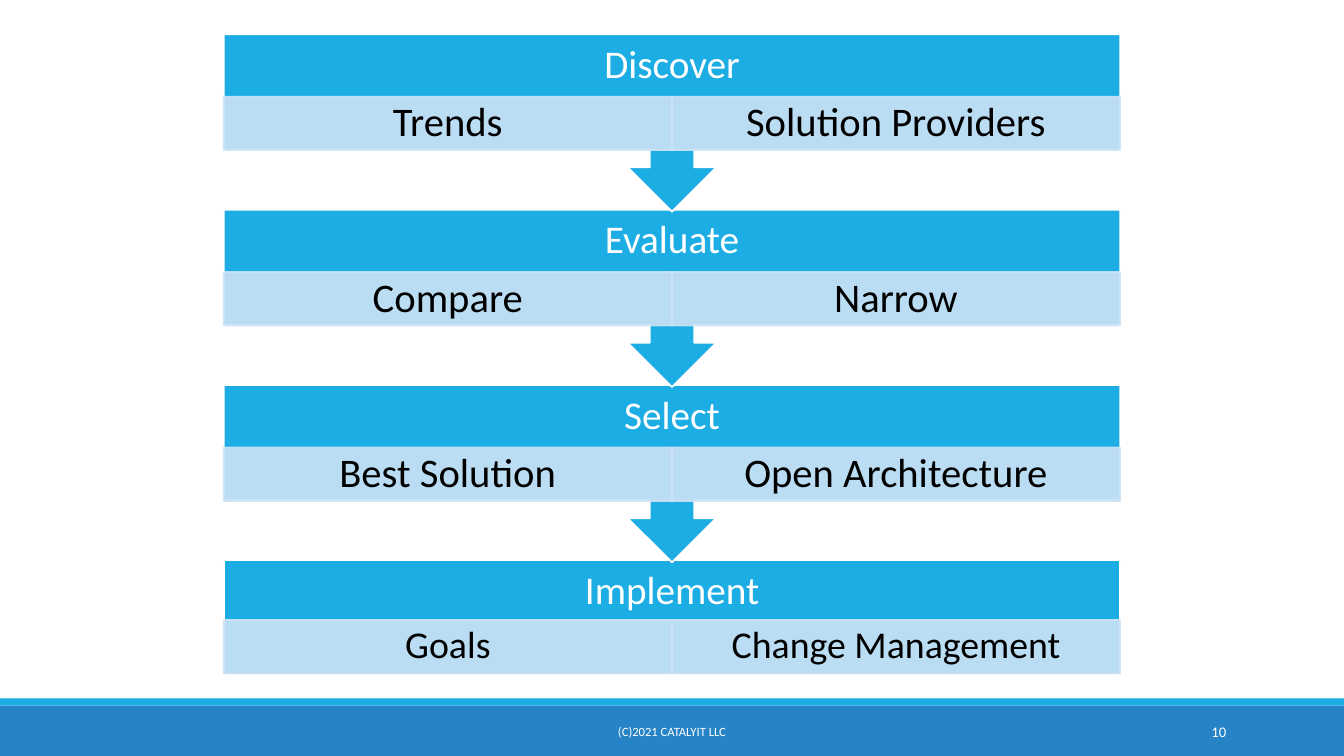
from dataclasses import dataclass

import pptx
import pptx.util
import pptx.dml.color
import pptx.enum.shapes
import pptx.enum.text
import pptx.oxml
import pptx.oxml.ns

Inches = pptx.util.Inches
MSO_SHAPE = pptx.enum.shapes.MSO_SHAPE
PP_ALIGN = pptx.enum.text.PP_ALIGN

COLORS = {
    "accent": "1CADE4",
    "footer": "2683C6",
    "cell": "CDE3F5",
    "white": "FFFFFF",
    "black": "000000",
}
LEFT, WIDTH, TOP, PITCH = 2.22, 8.89, 0.34, 1.74
HEADER_H, CELL_H = 0.62, 0.53


@dataclass
class Stage:
    """One step of the process with its two topics."""
    name: str
    topics: tuple[str, str]
    shape: MSO_SHAPE = MSO_SHAPE.UP_ARROW_CALLOUT
    height: float = 1.76
    cell_offset: float = 0.62
    cell_size: float = 29
    cell_inset: float = 0.23


STAGES = [
    Stage("Discover", ("Trends", "Solution Providers")),
    Stage("Evaluate", ("Compare", "Narrow")),
    Stage("Select", ("Best Solution", "Open Architecture")),
    Stage("Implement", ("Goals", "Change Management"),
          MSO_SHAPE.RECTANGLE, 1.14, 0.59, 27, 0.21),
]


def rgb(name: str) -> pptx.dml.color.RGBColor:
    """Return the named colour."""
    return pptx.dml.color.RGBColor.from_string(COLORS[name])


def add_block(s, kind: MSO_SHAPE, box: tuple, fill: str, line: str | None = None):
    """Add a filled preset shape at box (left, top, width, height)."""
    sp = s.shapes.add_shape(kind, *map(Inches, box))
    sp.shadow.inherit = False
    sp.fill.solid()
    sp.fill.fore_color.rgb = rgb(fill)
    if line:
        sp.line.color.rgb = rgb(line)
        sp.line.width = pptx.util.Pt(1.25)
    else:
        sp.line.fill.background()
    return sp


def add_box(s, box: tuple):
    """Add an empty text box."""
    return s.shapes.add_textbox(*map(Inches, box))


def set_text(sp, text: str, size: float, color: str, align=PP_ALIGN.CENTER,
             inset: tuple = (0.1, 0.05), spacing: float = 1.0) -> None:
    """Write one vertically centred paragraph into a shape."""
    tf = sp.text_frame
    tf.word_wrap = True
    tf.vertical_anchor = pptx.enum.text.MSO_ANCHOR.MIDDLE
    tf.margin_left = tf.margin_right = Inches(inset[0])
    tf.margin_top = tf.margin_bottom = Inches(inset[1])
    p = tf.paragraphs[0]
    p.text = text
    p.alignment = align
    p.line_spacing = spacing
    p.font.name = "Calibri"
    p.font.size = pptx.util.Pt(size)
    p.font.color.rgb = rgb(color)


def set_alpha(sp, percent: int) -> None:
    """Make the fill and line of a shape partly transparent."""
    for clr in sp._element.spPr.iter(pptx.oxml.ns.qn("a:srgbClr")):
        alpha = pptx.oxml.parse_xml(
            f'<a:alpha {pptx.oxml.ns.nsdecls("a")} val="{percent * 1000}"/>')
        clr.append(alpha)


def add_stage(s, stage: Stage, top: float) -> None:
    """Draw a stage: its callout, heading and two topic cells."""
    sp = add_block(s, stage.shape, (LEFT, top, WIDTH, stage.height), "accent", "white")
    if stage.shape == MSO_SHAPE.UP_ARROW_CALLOUT:
        sp.rotation = 180
    set_text(add_box(s, (LEFT, top, WIDTH, HEADER_H)), stage.name, 28, "white",
             inset=(0.22, 0.22), spacing=0.9)
    cell_w = WIDTH / len(stage.topics)
    for i, topic in enumerate(stage.topics):
        box = (LEFT + i * cell_w, top + stage.cell_offset, cell_w, CELL_H)
        cell = add_block(s, MSO_SHAPE.RECTANGLE, box, "cell", "cell")
        set_alpha(cell, 90)
        set_text(cell, topic, stage.cell_size, "black",
                 inset=(stage.cell_inset, 0.04), spacing=0.9)


def main() -> None:
    """Build the process slide."""
    prs = pptx.Presentation()
    prs.slide_width, prs.slide_height = Inches(13.33), Inches(7.5)
    s = prs.slides.add_slide(prs.slide_layouts[6])
    add_block(s, MSO_SHAPE.RECTANGLE, (0, 7, 13.33, 0.5), "footer")
    add_block(s, MSO_SHAPE.RECTANGLE, (0, 6.93, 13.33, 0.07), "accent")
    set_text(add_box(s, (4.03, 7.06, 5.27, 0.4)), "(C)2021 CATALYIT LLC", 9, "white")
    set_text(add_box(s, (10.83, 7.06, 1.43, 0.4)), "10", 10.5, "white", PP_ALIGN.RIGHT)
    for i, stage in reversed(list(enumerate(STAGES))):
        add_stage(s, stage, TOP + i * PITCH)
    prs.save("out.pptx")


if __name__ == "__main__":
    main()
